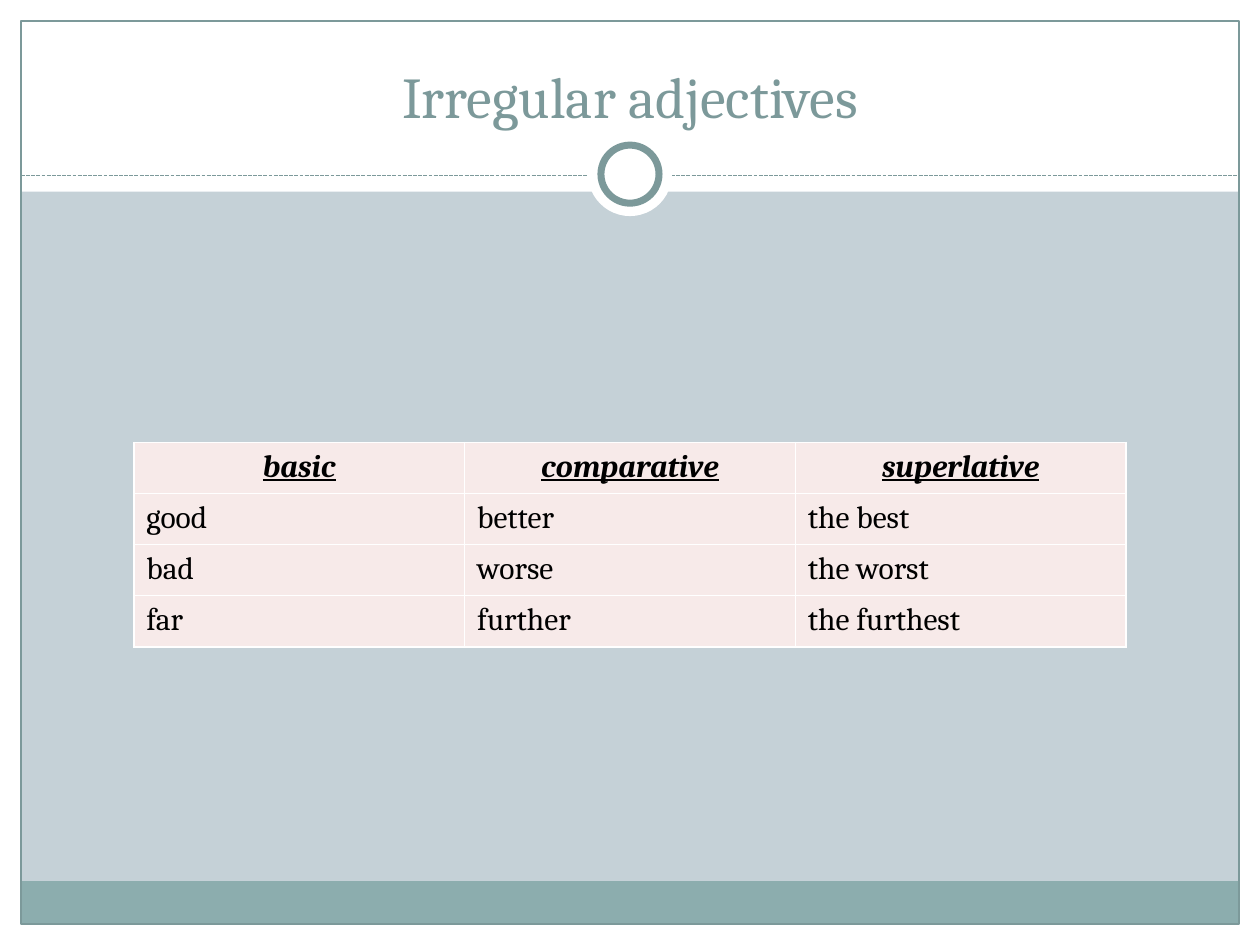
from lxml import etree
from pptx import Presentation
from pptx.dml.color import RGBColor
from pptx.enum import dml, shapes, text
from pptx.oxml import ns
from pptx.util import Pt

COLORS = {"background": "C5D1D7", "white": "FFFFFF", "band": "8CADAE",
          "accent": "7C999A", "cell": "F7EAE9", "ink": "000000"}
FONT = "Cambria"
WIDTH, HEIGHT, MARGIN = 720, 540, 12
HEADER_HEIGHT = 109.5
ROWS = [("basic", "comparative", "superlative"),
        ("good", "better", "the best"),
        ("bad", "worse", "the worst"),
        ("far", "further", "the furthest")]
HEADING = {"size": Pt(18), "bold": True, "italic": True, "underline": True}
BODY = {"size": Pt(18), "bold": False, "italic": False, "underline": False}


def rgb(name):
    return RGBColor.from_string(COLORS[name])


def add_figure(page, kind, box, fill=None, line_width=None):
    figure = page.shapes.add_shape(kind, *map(Pt, box))
    figure.shadow.inherit = False
    if fill:
        figure.fill.solid()
        figure.fill.fore_color.rgb = rgb(fill)
    else:
        figure.fill.background()
    if line_width:
        figure.line.color.rgb = rgb("accent")
        figure.line.width = Pt(line_width)
    else:
        figure.line.fill.background()


def write(para, words, color, align, font):
    para.alignment = align
    span = para.add_run()
    span.text = words
    span.font.name = FONT
    span.font.color.rgb = rgb(color)
    for name, value in font.items():
        setattr(span.font, name, value)


def add_frame(page, box):
    """White margins and header, bottom band and thin outline around the box."""
    left, top, width, height = box
    right, bottom = left + width, top + height
    rectangle = shapes.MSO_SHAPE.RECTANGLE
    for margin in ((0, bottom, WIDTH, HEIGHT - bottom),
                   (0, 0, WIDTH, HEADER_HEIGHT),
                   (0, 0, left, HEIGHT),
                   (right, 0, WIDTH - right, HEIGHT)):
        add_figure(page, rectangle, margin, "white")
    band_height = 24.5
    add_figure(page, rectangle, (left, bottom - band_height, width, band_height), "band")
    add_figure(page, rectangle, box, line_width=0.75)


def add_divider(page, box):
    """Dashed line across the box with a ring at its middle."""
    left, top, width, height = box
    line_y = top + 25
    line = page.shapes.add_connector(
        shapes.MSO_CONNECTOR.STRAIGHT, Pt(left), Pt(line_y), Pt(left + width), Pt(line_y))
    line.line.color.rgb = rgb("accent")
    line.line.width = Pt(0.75)
    line.line.dash_style = dml.MSO_LINE.SQUARE_DOT
    etree.SubElement(line._element.spPr, ns.qn("a:effectLst"))
    for size, line_width in ((height, None), (33.2, 4)):
        ring = (left + (width - size) / 2, top + (height - size) / 2, size, size)
        add_figure(page, shapes.MSO_SHAPE.OVAL, ring, "white", line_width)


def add_title(page, box, words):
    frame = page.shapes.add_textbox(*map(Pt, box)).text_frame
    frame.word_wrap = True
    frame.vertical_anchor = text.MSO_ANCHOR.BOTTOM
    write(frame.paragraphs[0], words, "accent", text.PP_ALIGN.CENTER, {"size": Pt(33)})


def style_cell(cell):
    properties = cell._tc.get_or_add_tcPr()
    for side in ("L", "R", "T", "B"):
        border = etree.SubElement(properties, ns.qn(f"a:ln{side}"), w=str(Pt(1)))
        paint = etree.SubElement(border, ns.qn("a:solidFill"))
        etree.SubElement(paint, ns.qn("a:srgbClr"), val=COLORS["white"])
    cell.fill.solid()
    cell.fill.fore_color.rgb = rgb("cell")


def add_adjectives(page, box):
    width, height = box[2:]
    table = page.shapes.add_table(len(ROWS), len(ROWS[0]), *map(Pt, box)).table
    for column in table.columns:
        column.width = Pt(width / len(ROWS[0]))
    for row_index, words in enumerate(ROWS):
        table.rows[row_index].height = Pt(height / len(ROWS))
        is_heading = row_index == 0
        align = text.PP_ALIGN.CENTER if is_heading else text.PP_ALIGN.LEFT
        for column_index, word in enumerate(words):
            cell = table.cell(row_index, column_index)
            style_cell(cell)
            write(cell.text_frame.paragraphs[0], word, "ink", align,
                  HEADING if is_heading else BODY)


def main():
    deck = Presentation()
    deck.slide_width, deck.slide_height = Pt(WIDTH), Pt(HEIGHT)
    page = deck.slides.add_slide(deck.slide_layouts[6])
    page.background.fill.solid()
    page.background.fill.fore_color.rgb = rgb("background")
    inner_width = WIDTH - 2 * MARGIN
    add_frame(page, (MARGIN, MARGIN, inner_width, HEIGHT - 2 * MARGIN))
    add_divider(page, (MARGIN, 75.5, inner_width, 48))
    add_title(page, (24, 18, 672, 60), "Irregular adjectives")
    add_adjectives(page, (76.5, 252.8, 567, 116.8))
    deck.save("out.pptx")


if __name__ == "__main__":
    main()
